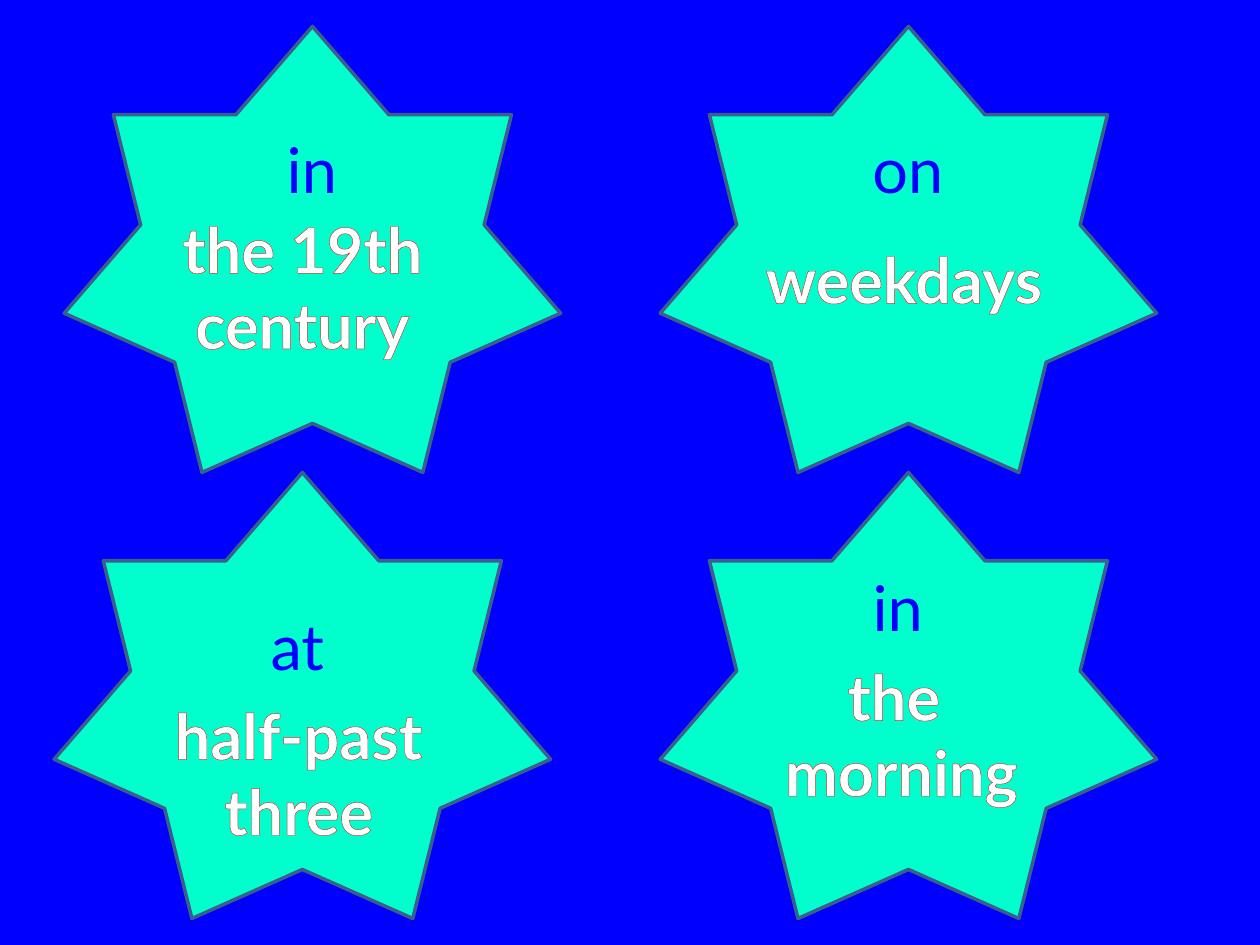
from dataclasses import dataclass

from lxml.etree import SubElement
from pptx import Presentation
from pptx.dml.color import RGBColor
from pptx.enum.shapes import MSO_SHAPE
from pptx.enum.text import MSO_AUTO_SIZE, PP_ALIGN
from pptx.oxml.ns import qn
from pptx.util import Inches, Pt


@dataclass(frozen=True)
class Theme:
    background: str = "0000FF"
    star: str = "00FFCC"
    star_edge: str = "3A5F8C"
    preposition: str = "0000FF"
    phrase: str = "FFFFFF"
    phrase_edge: str = "D02F2A"
    font: str = "Lato"
    text_size: float = 36
    star_edge_width: float = 2
    phrase_edge_width: float = 1.93


class StarSlide:
    STAR_WIDTH, STAR_HEIGHT = 3.94, 3.54
    LINE_HEIGHT, BOX_PADDING = 0.6, 0.11

    def __init__(self, presentation, theme):
        self.theme = theme
        self.slide = presentation.slides.add_slide(presentation.slide_layouts[6])
        background = self.slide.background.fill
        background.solid()
        background.fore_color.rgb = RGBColor.from_string(theme.background)

    def star(self, left, top):
        star = self.slide.shapes.add_shape(
            MSO_SHAPE.STAR_7_POINT, Inches(left), Inches(top),
            Inches(self.STAR_WIDTH), Inches(self.STAR_HEIGHT))
        star.shadow.inherit = False
        star.fill.solid()
        star.fill.fore_color.rgb = RGBColor.from_string(self.theme.star)
        star.line.color.rgb = RGBColor.from_string(self.theme.star_edge)
        star.line.width = Pt(self.theme.star_edge_width)

    def text(self, lines, left, top, width, color, wrap):
        height = len(lines) * self.LINE_HEIGHT + self.BOX_PADDING
        box = self.slide.shapes.add_textbox(
            Inches(left), Inches(top), Inches(width), Inches(height))
        frame = box.text_frame
        frame.word_wrap = wrap
        frame.auto_size = MSO_AUTO_SIZE.SHAPE_TO_FIT_TEXT
        frame.text = "\n".join(lines)
        for paragraph in frame.paragraphs:
            paragraph.alignment = PP_ALIGN.CENTER
            paragraph.font.name = self.theme.font
            paragraph.font.size = Pt(self.theme.text_size)
            paragraph.font.color.rgb = RGBColor.from_string(color)
        return frame

    def preposition(self, word, left, top, width):
        self.text([word], left, top, width, self.theme.preposition, wrap=True)

    def phrase(self, lines, left, top, width):
        frame = self.text(lines, left, top, width, self.theme.phrase, wrap=False)
        for paragraph in frame.paragraphs:
            paragraph.font.bold = True
            for run in paragraph.runs:
                self.outline(run)

    def outline(self, run):
        """Draw a coloured edge around the letters of a run."""
        properties = run.font._element
        edge = properties.makeelement(
            qn("a:ln"), {"w": str(Pt(self.theme.phrase_edge_width))})
        properties.insert(0, edge)
        fill = SubElement(edge, qn("a:solidFill"))
        SubElement(fill, qn("a:srgbClr"), val=self.theme.phrase_edge)


TOP_ROW, BOTTOM_ROW = 0.21, 3.75
RIGHT_COLUMN = 5.24

# star (left, top), preposition and its (left, top, width), phrase and its (left, top, width)
EXPRESSIONS = [
    ((0.51, TOP_ROW), "in", (0.98, 0.99, 2.99),
     ["the 19th", "century"], (1.06, 1.62, 2.68)),
    ((0.43, BOTTOM_ROW), "at", (0.98, 4.77, 2.76),
     ["half-past", "three"], (0.98, 5.48, 2.78)),
    ((RIGHT_COLUMN, BOTTOM_ROW), "in", (5.55, 4.46, 3.15),
     ["the ", "morning"], (5.94, 5.17, 2.43)),
    ((RIGHT_COLUMN, TOP_ROW), "on", (5.71, 0.99, 2.99),
     ["weekdays"], (5.71, 1.86, 2.93)),
]


def main():
    presentation = Presentation()
    presentation.slide_width = Inches(10)
    presentation.slide_height = Inches(7.5)
    page = StarSlide(presentation, Theme())
    for star_place, _, _, _, _ in EXPRESSIONS:
        page.star(*star_place)
    for _, word, word_place, phrase, phrase_place in EXPRESSIONS:
        page.phrase(phrase, *phrase_place)
        page.preposition(word, *word_place)
    presentation.save("out.pptx")


if __name__ == "__main__":
    main()
